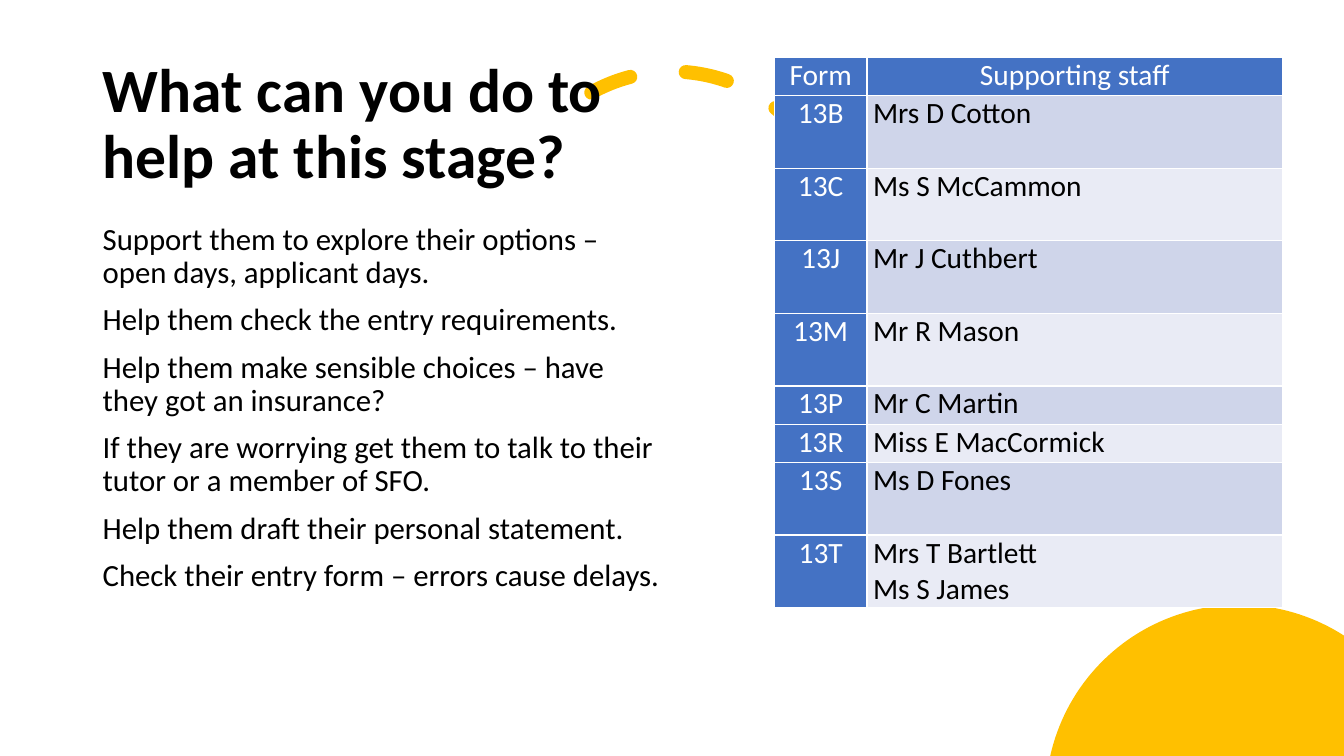
import math
from lxml import etree
from pptx import Presentation
from pptx.dml.color import RGBColor
from pptx.enum import dml, shapes, text
from pptx.oxml.ns import qn
from pptx.util import Inches, Pt

YELLOW, BLUE, WHITE, BLACK = "FFC000", "4472C4", "FFFFFF", "000000"
BANDS = ["CFD5EA", "E9EBF5"]
ADVICE = [
    "Support them to explore their options – open days, applicant days.",
    "Help them check the entry requirements.",
    "Help them make sensible choices – have they got an insurance?",
    "If they are worrying get them to talk to their tutor or a member of SFO.",
    "Help them draft their personal statement.",
    "Check their entry form – errors cause delays.",
]
STAFF = [
    ("Form", "Supporting staff", 0.38),
    ("13B", "Mrs D Cotton", 0.72),
    ("13C", "Ms S McCammon", 0.72),
    ("13J", "Mr J Cuthbert", 0.72),
    ("13M", "Mr R Mason", 0.72),
    ("13P", "Mr C Martin", 0.38),
    ("13R", "Miss E MacCormick", 0.38),
    ("13S", "Ms D Fones", 0.72),
    ("13T", "Mrs T Bartlett\nMs S James", 0.72),
]


def rgb(value):
    return RGBColor.from_string(value)


def style(p, size, color, bold=False):
    for r in p.runs:
        r.font.name = "Calibri"
        r.font.size = Pt(size)
        r.font.bold = bold
        r.font.color.rgb = rgb(color)


prs = Presentation()
prs.slide_width, prs.slide_height = Inches(13.33), Inches(7.5)
s = prs.slides.add_slide(prs.slide_layouts[5])
s.background.fill.solid()
s.background.fill.fore_color.rgb = rgb(WHITE)

# Circle in the corner, cut off by the slide's right and bottom edges
cx, cy, radius = 12.29, 7.92, 1.92
start = math.pi + math.asin((cy - 7.5) / radius)
end = 1.5 * math.pi + math.asin((13.33 - cx) / radius)
angles = [start + (end - start) * i / 60 for i in range(61)]
points = [(Inches(cx + radius * math.cos(a)), Inches(cy + radius * math.sin(a))) for a in angles]
points.append((Inches(13.33), Inches(7.5)))
builder = s.shapes.build_freeform(*points[0])
builder.add_line_segments(points[1:], close=True)
circle = builder.convert_to_shape()
circle.shadow.inherit = False
circle.fill.solid()
circle.fill.fore_color.rgb = rgb(YELLOW)
circle.line.fill.background()

# Dashed arc
arc = s.shapes.add_shape(shapes.MSO_SHAPE.ARC, Inches(5.03), Inches(0.71), Inches(3.27), Inches(3.27))
arc.adjustments[0], arc.adjustments[1] = 144.418, 0
arc.shadow.inherit = False
arc.fill.background()
arc.line.color.rgb = rgb(YELLOW)
arc.line.width = Pt(10)
arc.line.dash_style = dml.MSO_LINE.DASH
arc.line._get_or_add_ln().set("cap", "rnd")

# Title, brought in front of the decoration
title = s.shapes.title
s.shapes.element.append(title.element)
title.left, title.top, title.width, title.height = Inches(0.92), Inches(0.52), Inches(5.75), Inches(1.45)
tf = title.text_frame
tf.text = "What can you do to help at this stage?"
tf.word_wrap = True
tf.auto_size = text.MSO_AUTO_SIZE.NONE
tf.vertical_anchor = text.MSO_ANCHOR.MIDDLE
p = tf.paragraphs[0]
p.alignment = text.PP_ALIGN.LEFT
p.line_spacing = 0.9
style(p, 44, BLACK, True)

# Advice
tf = s.shapes.add_textbox(Inches(0.92), Inches(2.17), Inches(5.75), Inches(4.58)).text_frame
tf.word_wrap = True
tf.text = "\n".join(ADVICE)
for i, p in enumerate(tf.paragraphs):
    p.line_spacing = 0.9
    p.space_before = Pt(10 if i else 0)
    style(p, 22, BLACK)

# Staff table
table = s.shapes.add_table(len(STAFF), 2, Inches(7.68), Inches(0.57), Inches(5.04), Inches(5.46)).table
table.columns[0].width, table.columns[1].width = Inches(0.92), Inches(4.12)
for row, (form, staff, height) in enumerate(STAFF):
    table.rows[row].height = Inches(height)
    for col, words in enumerate((form, staff)):
        cell = table.cell(row, col)
        heading = row == 0 or col == 0
        cell.margin_left = cell.margin_right = Inches(0.06)
        cell.margin_top = cell.margin_bottom = 0
        cell.text = words
        for p in cell.text_frame.paragraphs:
            p.alignment = text.PP_ALIGN.CENTER if heading else text.PP_ALIGN.LEFT
            style(p, 21, WHITE if heading else BLACK)
        for side in ("lnL", "lnR", "lnT", "lnB"):
            ln = etree.SubElement(cell._tc.get_or_add_tcPr(), qn("a:" + side), w=str(Pt(1)))
            fill = etree.SubElement(ln, qn("a:solidFill"))
            etree.SubElement(fill, qn("a:srgbClr"), val=WHITE)
        cell.fill.solid()
        cell.fill.fore_color.rgb = rgb(BLUE if heading else BANDS[(row - 1) % 2])

prs.save("out.pptx")
